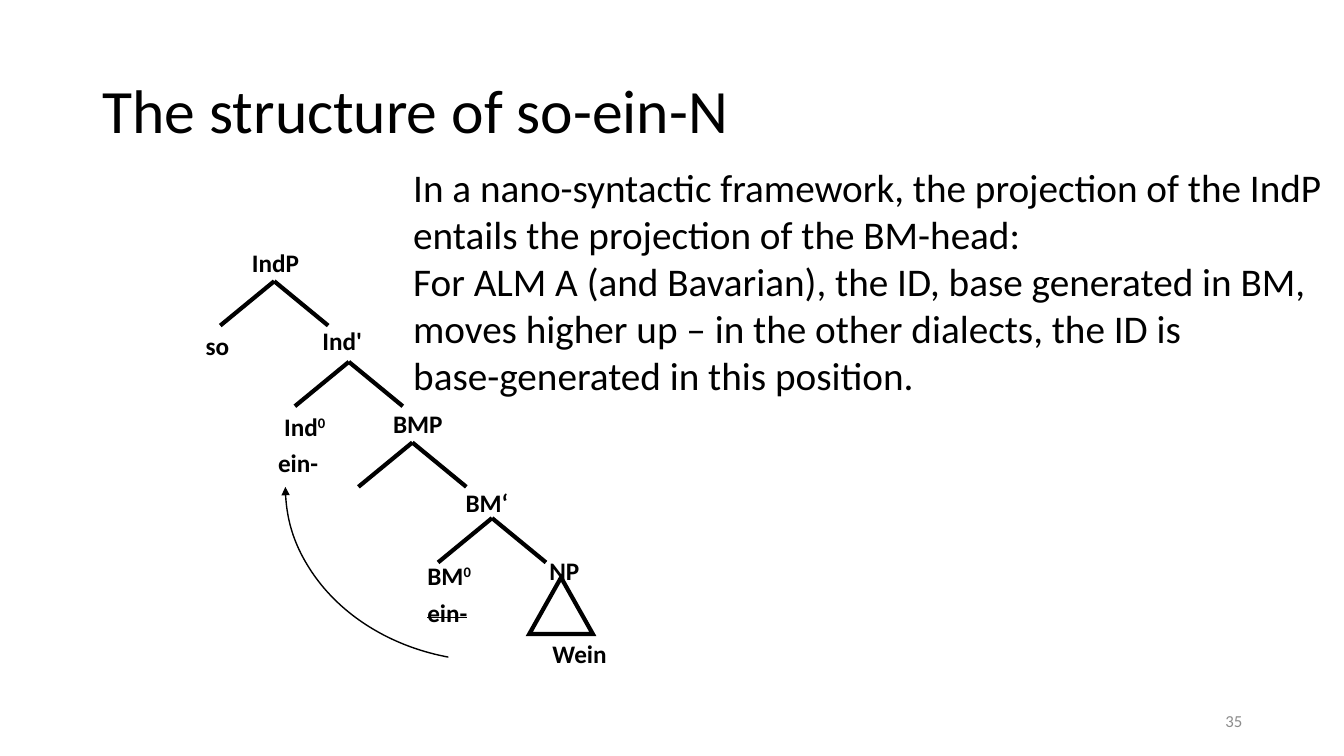
from lxml import etree
from pptx import Presentation, util as u
from pptx.dml.color import RGBColor
from pptx.enum import shapes as s, text as t
from pptx.oxml.ns import qn

BLACK = RGBColor(0x00, 0x00, 0x00)
GREY = RGBColor(0x8C, 0x8C, 0x8C)
CELL = 0.1  # inches per grid column and row; the slide is 133.33 by 75 cells
FONT = "Calibri"

# Boxes on the slide: column, row, columns wide, rows high
TITLE_BOX = (9.2, 4, 115, 14.5)
CLAIM_BOX = (40, 15.7, 94.1, 24.6)
TREE_BOX = (19.4, 24, 41.9, 42.8)
NUMBER_BOX = (94.2, 69.5, 30, 4)

TITLE = "The structure of so-ein-N"
CLAIM = (
    "In a nano-syntactic framework, the projection of the IndP \v"
    "entails the projection of the BM-head:\n"
    "For ALM A (and Bavarian), the ID, base generated in BM, \v"
    "moves higher up – in the other dialects, the ID is \v"
    "base-generated in this position."
)

# Tree parts, in cells from the corner of the tree box
BRANCH_TOPS = [(7.8, 3.9), (15.2, 11.9), (21.5, 19.9), (29.4, 27.4)]
BRANCH_REACH, BRANCH_DROP = 5.35, 4.4
NP_TRIANGLE = (33.1, 33.3, 6.3, 5.6)
MOVEMENT_ARC = (8.9, 7, 41.3, 34.6)
NODE_HEIGHT = 4
NODES = [  # column, row, width, label, superscript, struck out
    (4.6, 0, 6.7, "IndP", "", False),
    (0, 8.3, 4.8, "so", "", False),
    (11.6, 7.8, 6, "Ind'", "", False),
    (7.8, 16.3, 6.2, "Ind", "0", False),
    (7.2, 19.9, 6, "ein-", "", False),
    (18.6, 16, 7, "BMP", "", False),
    (25.8, 23.9, 6.3, "BM‘", "", False),
    (22, 31.1, 6.5, "BM", "0", False),
    (22, 34.8, 6, "ein-", "", True),
    (34.1, 30.6, 5, "NP", "", False),
    (34.4, 38.8, 7.5, "Wein", "", False),
]


def cells(*counts):
    return [u.Inches(count * CELL) for count in counts]


def inside(box, part):
    """Move a part given from the corner of its box to slide cells."""
    return (box[0] + part[0], box[1] + part[1], *part[2:])


def add_text(slide, box, wording, size, color=BLACK, bold=False, wrap=True,
             anchor=t.MSO_ANCHOR.TOP):
    frame = slide.shapes.add_textbox(*cells(*box)).text_frame
    frame.word_wrap = wrap
    frame.vertical_anchor = anchor
    frame.text = wording
    for paragraph in frame.paragraphs:
        for run in paragraph.runs:
            style_run(run, size, color, bold)
    return frame


def style_run(run, size, color, bold):
    run.font.name = FONT
    run.font.size = u.Pt(size)
    run.font.color.rgb = color
    run.font.bold = bold


def outline(shape, weight):
    shape.shadow.inherit = False
    shape.fill.background()
    shape.line.color.rgb = BLACK
    shape.line.width = u.Pt(weight)
    # Sharp corners
    etree.SubElement(shape.line._get_or_add_ln(), qn("a:miter"), lim="800000")


def add_title(slide, box):
    frame = add_text(slide, box, TITLE, 44, anchor=t.MSO_ANCHOR.MIDDLE)
    frame.paragraphs[0].line_spacing = 0.9


def add_number(slide, box):
    frame = add_text(slide, box, "35", 12, GREY, anchor=t.MSO_ANCHOR.MIDDLE)
    frame.paragraphs[0].alignment = t.PP_ALIGN.RIGHT


def add_claim(slide, box):
    frame = add_text(slide, box, CLAIM, 28)
    frame.auto_size = t.MSO_AUTO_SIZE.SHAPE_TO_FIT_TEXT


def add_branch(slide, top):
    """Two arms falling left and right from one node."""
    branch = slide.shapes.add_group_shape()
    column, row = top
    for reach in (-BRANCH_REACH, BRANCH_REACH):
        arm = branch.shapes.add_connector(
            s.MSO_CONNECTOR.STRAIGHT,
            *cells(column + reach, row + BRANCH_DROP, column, row))
        arm.line.color.rgb = BLACK
        arm.line.width = u.Pt(3)
        etree.SubElement(arm._element.spPr, qn("a:effectLst"))


def add_node(slide, box, label, superscript, struck):
    frame = add_text(slide, box, label, 18, bold=True, wrap=False)
    frame.auto_size = t.MSO_AUTO_SIZE.SHAPE_TO_FIT_TEXT
    paragraph = frame.paragraphs[0]
    if struck:
        paragraph.runs[0]._r.get_or_add_rPr().set("strike", "sngStrike")
    if superscript:
        index = paragraph.add_run()
        index.text = superscript
        style_run(index, 18, BLACK, True)
        index._r.get_or_add_rPr().set("baseline", "30000")


def add_movement(slide, box):
    """Curved arrow from the lower ein- to the higher one."""
    arc = slide.shapes.add_shape(s.MSO_SHAPE.ARC, *cells(*box))
    arc.adjustments[0] = 170.92
    arc.adjustments[1] = 0
    arc.rotation = 180
    outline(arc, 1)
    etree.SubElement(arc.line._get_or_add_ln(), qn("a:tailEnd"), type="triangle")


def add_tree(slide, box):
    triangle = slide.shapes.add_shape(
        s.MSO_SHAPE.ISOSCELES_TRIANGLE, *cells(*inside(box, NP_TRIANGLE)))
    outline(triangle, 3)
    for top in BRANCH_TOPS:
        add_branch(slide, inside(box, top))
    for column, row, width, *wording in NODES:
        add_node(slide, inside(box, (column, row, width, NODE_HEIGHT)), *wording)
    add_movement(slide, inside(box, MOVEMENT_ARC))


def main():
    deck = Presentation()
    deck.slide_width, deck.slide_height = u.Inches(13.33), u.Inches(7.5)
    slide = deck.slides.add_slide(deck.slide_layouts[6])
    add_title(slide, TITLE_BOX)
    add_number(slide, NUMBER_BOX)
    add_tree(slide, TREE_BOX)
    add_claim(slide, CLAIM_BOX)
    deck.save("out.pptx")


if __name__ == "__main__":
    main()
